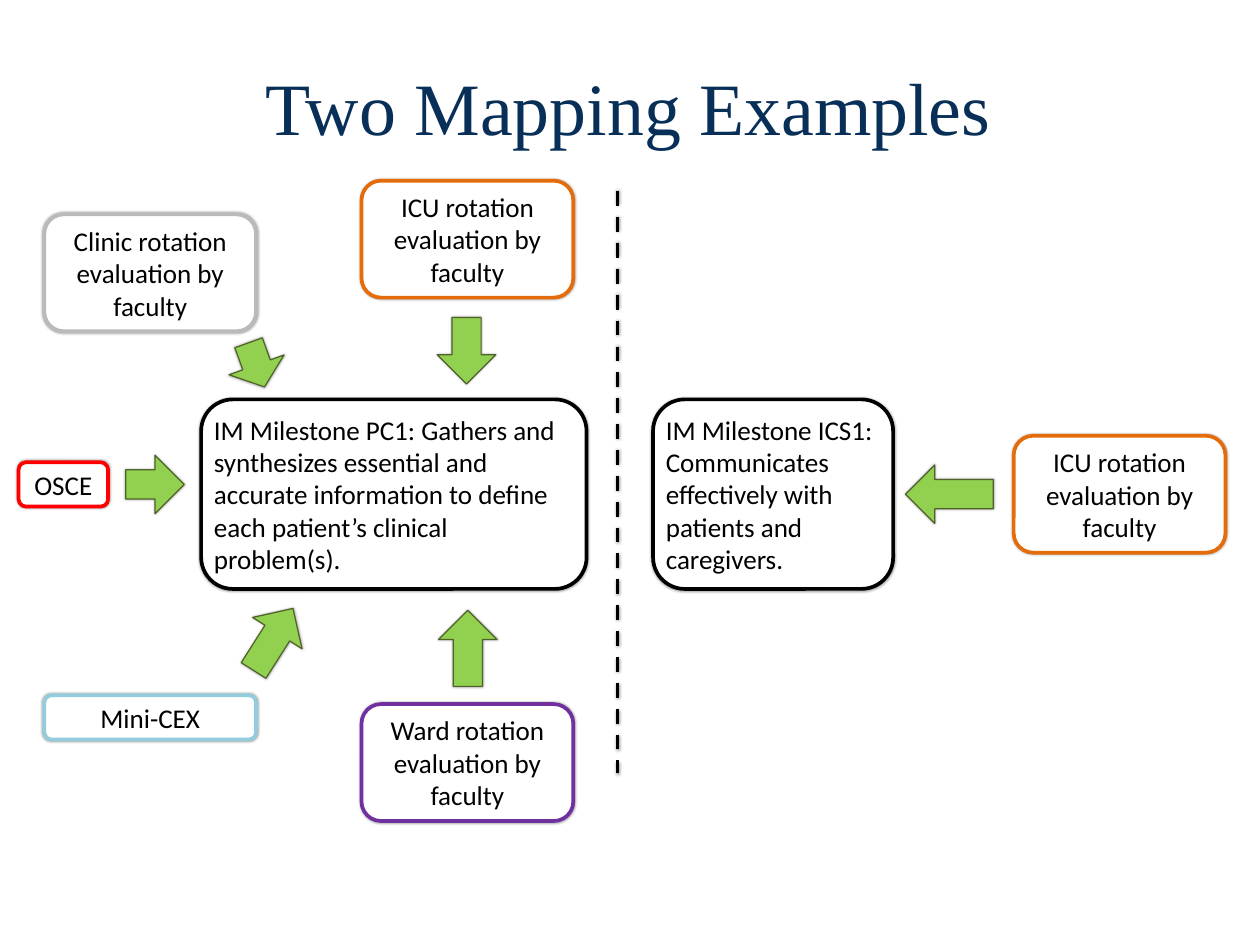
from dataclasses import dataclass

from pptx import Presentation
from pptx.dml.color import RGBColor
from pptx.enum.dml import MSO_LINE_DASH_STYLE as Dash
from pptx.enum.shapes import MSO_CONNECTOR_TYPE as Connector, MSO_SHAPE as Preset
from pptx.enum.text import MSO_ANCHOR as Anchor, MSO_AUTO_SIZE as AutoSize, PP_ALIGN as Align
from pptx.oxml import parse_xml
from pptx.oxml.ns import nsdecls
from pptx.slide import Slide
from pptx.text.text import TextFrame
from pptx.util import Inches, Pt


@dataclass(frozen=True)
class Theme:
    title_font: str = "Times New Roman"
    body_font: str = "Calibri"
    title_size: int = 60
    body_size: int = 22
    navy: str = "082F57"
    black: str = "000000"
    white: str = "FFFFFF"
    orange: str = "E46C0A"
    gray: str = "BABABA"
    red: str = "FF0000"
    aqua: str = "93CDDD"
    purple: str = "7030A0"
    green: str = "92D050"
    dark_green: str = "4F6228"
    heavy_line: int = 3
    thin_line: int = 1


@dataclass(frozen=True)
class Box:
    text: str
    left: float
    top: float
    color: str
    width: float = 2.39
    height: float = 1.32
    align: Align = Align.CENTER


@dataclass(frozen=True)
class Arrow:
    left: float
    top: float
    length: float
    rotation: float = 0


THEME = Theme()
ARROW_BREADTH = 0.66
BOX_INSET = 0.04
MILESTONE_TOP, MILESTONE_HEIGHT = 4.51, 2.14
LABEL_HEIGHT = 0.5
CLINIC_LEFT, ICU_LEFT = 0.5, 4.08

BOXES = [
    Box("IM Milestone ICS1: Communicates effectively with patients and caregivers.",
        7.37, MILESTONE_TOP, THEME.black, 2.71, MILESTONE_HEIGHT, Align.LEFT),
    Box("IM Milestone PC1: Gathers and synthesizes essential and accurate information "
        "to define each patient’s clinical problem(s).",
        2.27, MILESTONE_TOP, THEME.black, 4.35, MILESTONE_HEIGHT, Align.LEFT),
    Box("ICU rotation evaluation by faculty", 11.44, 4.92, THEME.orange),
    Box("Clinic rotation evaluation by faculty", CLINIC_LEFT, 2.42, THEME.gray),
    Box("OSCE", 0.21, 5.22, THEME.red, 1.01, LABEL_HEIGHT),
    Box("Mini-CEX", CLINIC_LEFT, 7.85, THEME.aqua, height=LABEL_HEIGHT),
    Box("Ward rotation evaluation by faculty", ICU_LEFT, 7.95, THEME.purple),
    Box("ICU rotation evaluation by faculty", ICU_LEFT, 2.04, THEME.orange),
]

ARROWS = [
    Arrow(2.67, 6.89, 0.83, 302.4),
    Arrow(4.85, 6.99, 0.86, 270),
    Arrow(4.89, 3.63, 0.75, 90),
    Arrow(2.63, 3.79, 0.53, 70.2),
    Arrow(1.42, 5.14, 0.66),
    Arrow(10.22, 5.25, 0.99, 180),
]


def add_shadow(shape, opacity: int = 35) -> None:
    """Give a shape or connector a soft black shadow."""
    shape._element.spPr.append(parse_xml(
        f'<a:effectLst {nsdecls("a")}>'
        f'<a:outerShdw blurRad="{Pt(2)}" dist="0" dir="5400000" rotWithShape="0">'
        f'<a:srgbClr val="{THEME.black}"><a:alpha val="{opacity * 1000}"/></a:srgbClr>'
        '</a:outerShdw></a:effectLst>'))


def write_text(frame: TextFrame, text: str, font: str, size: int, color: str, align: Align) -> None:
    """Write one formatted run into a wrapped, vertically centred frame."""
    frame.word_wrap = True
    frame.vertical_anchor = Anchor.MIDDLE
    paragraph = frame.paragraphs[0]
    paragraph.alignment = align
    run = paragraph.add_run()
    run.text = text
    run.font.name = font
    run.font.size = Pt(size)
    run.font.color.rgb = RGBColor.from_string(color)


def add_preset(slide: Slide, preset: Preset, left: float, top: float, width: float,
               height: float, fill: str, line: str, line_width: int):
    """Draw a filled and outlined preset shape with a shadow."""
    shape = slide.shapes.add_shape(preset, Inches(left), Inches(top), Inches(width), Inches(height))
    shape.fill.solid()
    shape.fill.fore_color.rgb = RGBColor.from_string(fill)
    shape.line.color.rgb = RGBColor.from_string(line)
    shape.line.width = Pt(line_width)
    add_shadow(shape)
    return shape


def add_box(slide: Slide, box: Box) -> None:
    """Draw a rounded box with its text."""
    shape = add_preset(slide, Preset.ROUNDED_RECTANGLE, box.left, box.top, box.width, box.height,
                       THEME.white, box.color, THEME.heavy_line)
    frame = shape.text_frame
    frame.margin_left = frame.margin_right = Inches(BOX_INSET)
    frame.margin_top = frame.margin_bottom = Inches(BOX_INSET)
    frame.auto_size = AutoSize.SHAPE_TO_FIT_TEXT
    write_text(frame, box.text, THEME.body_font, THEME.body_size, THEME.black, box.align)


def add_arrow(slide: Slide, arrow: Arrow) -> None:
    """Draw a rotated green block arrow."""
    shape = add_preset(slide, Preset.RIGHT_ARROW, arrow.left, arrow.top, arrow.length,
                       ARROW_BREADTH, THEME.green, THEME.dark_green, THEME.thin_line)
    shape.rotation = arrow.rotation


def add_divider(slide: Slide) -> None:
    """Draw the dashed line between the two examples."""
    divider = slide.shapes.add_connector(
        Connector.STRAIGHT, Inches(6.97), Inches(2.16), Inches(6.97), Inches(8.73))
    divider.line.color.rgb = RGBColor.from_string(THEME.black)
    divider.line.width = Pt(THEME.heavy_line)
    divider.line.dash_style = Dash.DASH
    add_shadow(divider, 38)


def add_title(slide: Slide) -> None:
    """Place and format the slide title."""
    title = slide.shapes.title
    title.left, title.top = Inches(1.69), Inches(0.63)
    title.width, title.height = Inches(10.8), Inches(1.14)
    write_text(title.text_frame, "Two Mapping Examples", THEME.title_font,
               THEME.title_size, THEME.navy, Align.CENTER)


def main() -> None:
    """Build and save the slide."""
    presentation = Presentation()
    presentation.slide_width, presentation.slide_height = Inches(14.22), Inches(10.67)
    slide = presentation.slides.add_slide(presentation.slide_layouts[5])
    add_title(slide)
    for box in BOXES:
        add_box(slide, box)
    add_divider(slide)
    for arrow in ARROWS:
        add_arrow(slide, arrow)
    presentation.save("out.pptx")


if __name__ == "__main__":
    main()
